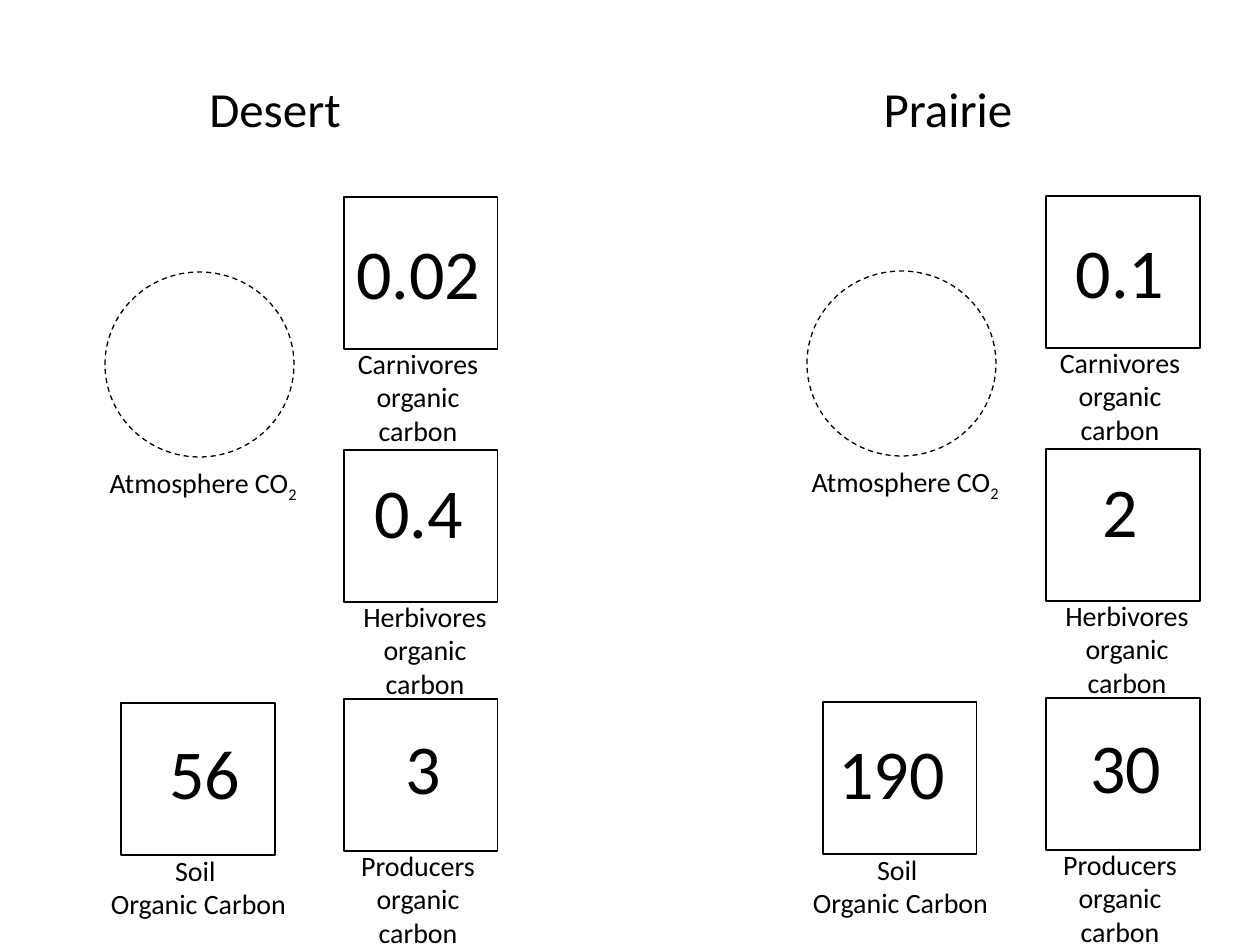
from dataclasses import dataclass
from pptx import Presentation
from pptx.dml.color import RGBColor
from pptx.enum.dml import MSO_LINE
from pptx.enum.shapes import MSO_SHAPE
from pptx.enum.text import MSO_ANCHOR, MSO_AUTO_SIZE, PP_ALIGN
from pptx.util import Emu, Pt

PX = 914400 // 126


@dataclass(frozen=True)
class Theme:
    font: str = "Calibri"
    ink: RGBColor = RGBColor(0, 0, 0)
    paper: RGBColor = RGBColor(255, 255, 255)
    heading: int = 28
    number: int = 40
    label: int = 16
    line: float = 0.75


THEME = Theme()

ATMOSPHERE = (105, 272, 189, 185)
ATMOSPHERE_LABEL = (87, 459, 232, 38)
SQUARE = (154, 152)

POOLS = {
    "producers": {"square": (344, 699), "label": (328, 842, 180, 64),
                  "lines": ["Producers organic carbon"]},
    "herbivores": {"square": (344, 450), "label": (335, 593, 180, 64),
                   "lines": ["Herbivores organic carbon"]},
    "carnivores": {"square": (344, 197), "label": (328, 340, 180, 64),
                   "lines": ["Carnivores organic carbon"]},
    "soil": {"square": (121, 703), "label": (96, 847, 205, 64),
             "lines": ["Soil ", "Organic Carbon"]},
}

NUMBER_BOXES = {
    "producers": (363, 718, 121, 97),
    "herbivores": (358, 462, 121, 97),
    "carnivores": (338, 223, 160, 97),
    "soil": (144, 723, 121, 97),
}

BIOMES = [
    {"name": "Desert", "heading": (73, 72, 404, 72), "placeholder": 1, "shift": (0, 0),
     "values": {"producers": "3", "soil": "56", "herbivores": "0.4", "carnivores": "0.02"},
     "boxes": NUMBER_BOXES},
    {"name": "Prairie", "heading": (746, 72, 404, 72), "placeholder": 3, "shift": (702, -1),
     "values": {"producers": "30", "soil": "190", "herbivores": "2", "carnivores": "0.1"},
     "boxes": {**NUMBER_BOXES, "soil": (104, 724, 171, 97)}},
]


def emu(lengths):
    return [Emu(length * PX) for length in lengths]


def shifted(box, shift):
    left, top, width, height = box
    return emu((left + shift[0], top + shift[1], width, height))


def add_span(para, text, size):
    span = para.add_run()
    span.text = text
    span.font.name = THEME.font
    span.font.size = Pt(size)
    span.font.bold = False
    span.font.color.rgb = THEME.ink
    return span


def write_lines(frame, lines, size):
    frame.word_wrap = True
    frame.vertical_anchor = MSO_ANCHOR.TOP
    for index, line in enumerate(lines):
        para = frame.add_paragraph() if index else frame.paragraphs[0]
        para.alignment = PP_ALIGN.CENTER
        para.space_before = Pt(0)
        add_span(para, line, size)


def add_text(group, box, lines, size):
    frame = group.shapes.add_textbox(*box).text_frame
    write_lines(frame, lines, size)
    frame.auto_size = MSO_AUTO_SIZE.SHAPE_TO_FIT_TEXT
    return frame


def add_outline(group, preset, box):
    shape = group.shapes.add_shape(preset, *box)
    shape.shadow.inherit = False
    shape.fill.background()
    shape.line.color.rgb = THEME.ink
    shape.line.width = Pt(THEME.line)
    return shape


def add_heading(page, biome):
    heading = page.placeholders[biome["placeholder"]]
    heading.left, heading.top, heading.width, heading.height = emu(biome["heading"])
    write_lines(heading.text_frame, [biome["name"]], THEME.heading)
    heading.text_frame.auto_size = MSO_AUTO_SIZE.NONE


def add_biome(page, biome):
    shift = biome["shift"]
    group = page.shapes.add_group_shape()

    frame = add_text(group, shifted(ATMOSPHERE_LABEL, shift), ["Atmosphere CO"], THEME.label)
    subscript = add_span(frame.paragraphs[0], "2", THEME.label)
    subscript.font._element.set("baseline", "-25000")

    for pool in POOLS.values():
        add_outline(group, MSO_SHAPE.RECTANGLE, shifted(pool["square"] + SQUARE, shift))

    circle = add_outline(group, MSO_SHAPE.OVAL, shifted(ATMOSPHERE, shift))
    circle.fill.solid()
    circle.fill.fore_color.rgb = THEME.paper
    circle.line.dash_style = MSO_LINE.DASH

    for name, pool in POOLS.items():
        add_text(group, shifted(pool["label"], shift), pool["lines"], THEME.label)
        number_box = shifted(biome["boxes"][name], shift)
        add_text(group, number_box, [biome["values"][name]], THEME.number)


def main():
    deck = Presentation()
    deck.slide_width, deck.slide_height = emu((1260, 945))
    page = deck.slides.add_slide(deck.slide_layouts.get_by_name("Comparison"))
    for biome in BIOMES:
        add_heading(page, biome)
        add_biome(page, biome)
    for placeholder in list(page.placeholders):
        if not placeholder.text_frame.text:
            placeholder.element.getparent().remove(placeholder.element)
    deck.save("out.pptx")


if __name__ == "__main__":
    main()
